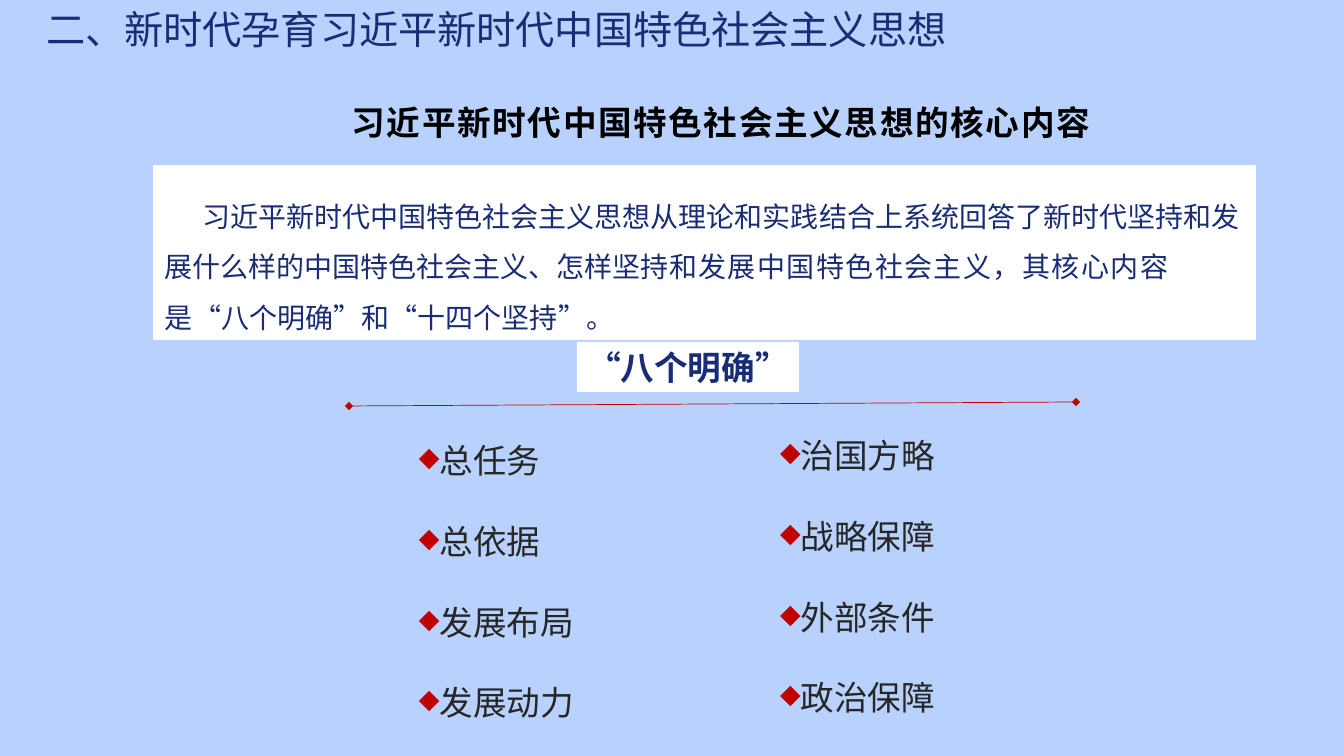
from dataclasses import dataclass, field
from typing import Any

from lxml.etree import SubElement
from pptx import Presentation
from pptx.dml.color import RGBColor
from pptx.enum.lang import MSO_LANGUAGE_ID as Lang
from pptx.enum.shapes import MSO_CONNECTOR as Connector, MSO_SHAPE as Preset
from pptx.enum.text import MSO_ANCHOR as Anchor, MSO_AUTO_SIZE as Fit, PP_ALIGN as Align
from pptx.oxml.ns import qn
from pptx.util import Emu, Pt

SLIDE_W, SLIDE_H = 1344, 756
SCALE = 12192000 / SLIDE_W
FONT = "Noto Sans CJK SC"
NAVY, RED, WHITE, BLACK, GREY = "192C76", "C00000", "FFFFFF", "000000", "262626"
SKY = "B9D2FD"
BULLET_HANG = -31


def px(length: int) -> Emu:
    return Emu(round(length * SCALE))


def paint(target: Any, colour: str) -> None:
    target.solid()
    target.fore_color.rgb = RGBColor.from_string(colour)


def assign(target: Any, values: dict[str, Any]) -> None:
    for name, value in values.items():
        setattr(target, name, value)


@dataclass(frozen=True)
class Piece:
    text: str
    spacing: int = 0


@dataclass(frozen=True)
class Block:
    box: tuple[int, int, int, int]
    paragraphs: list[list[Piece]]
    size: int
    colour: str
    bold: bool = False
    bullet: bool = False
    indent: tuple[int, int] = (0, 0)
    frame: dict[str, Any] = field(default_factory=dict)
    layout: dict[str, Any] = field(default_factory=dict)


def add_bullet(properties: Any) -> None:
    colour = SubElement(properties, qn("a:buClr"))
    SubElement(colour, qn("a:srgbClr"), val=RED)
    SubElement(properties, qn("a:buSzPct"), val="80000")
    SubElement(properties, qn("a:buChar"), char="◆")


def write(shape: Any, block: Block) -> None:
    assign(shape, dict(zip(("left", "top", "width", "height"), map(px, block.box))))
    text_frame = shape.text_frame
    assign(text_frame, {
        "word_wrap": True,
        "auto_size": Fit.SHAPE_TO_FIT_TEXT,
        "vertical_anchor": Anchor.TOP,
        "margin_left": px(10), "margin_right": px(10),
        "margin_top": px(5), "margin_bottom": px(5),
    } | block.frame)
    for index, pieces in enumerate(block.paragraphs):
        paragraph = text_frame.add_paragraph() if index else text_frame.paragraphs[0]
        properties = paragraph._p.get_or_add_pPr()
        for name, length in zip(("marL", "indent"), block.indent):
            properties.set(name, str(px(length)))
        if block.bullet:
            add_bullet(properties)
        assign(paragraph, {"alignment": Align.LEFT} | block.layout)
        for piece in pieces:
            run = paragraph.add_run()
            run.text = piece.text
            assign(run.font, {"name": FONT, "size": Pt(block.size), "bold": block.bold,
                              "language_id": Lang.SIMPLIFIED_CHINESE})
            paint(run.font.fill, block.colour)
            character = run._r.get_or_add_rPr()
            character.set("spc", str(piece.spacing))
            SubElement(character, qn("a:ea"), typeface=FONT)


def add_text(slide: Any, block: Block) -> None:
    write(slide.shapes.add_textbox(*map(px, block.box)), block)


def add_panel(slide: Any, block: Block, outline: str | None = None) -> None:
    panel = slide.shapes.add_shape(Preset.RECTANGLE, *map(px, block.box))
    panel.shadow.inherit = False
    paint(panel.fill, WHITE)
    if outline:
        paint(panel.line.fill, outline)
        panel.line.width = Pt(1)
    else:
        panel.line.fill.background()
    write(panel, block)


def add_divider(slide: Any, start: tuple[int, int], end: tuple[int, int]) -> None:
    divider = slide.shapes.add_connector(Connector.STRAIGHT, *map(px, start + end))
    paint(divider.line.fill, RED)
    divider.line.width = Pt(0.5)
    outline = divider.line._get_or_add_ln()
    for tip in ("a:headEnd", "a:tailEnd"):
        SubElement(outline, qn(tip), type="diamond")
    SubElement(divider._element.spPr, qn("a:effectLst"))


TITLE = Block((18, 0, 1012, 57), [[Piece("二、新时代孕育习近平新时代中国特色社会主义思想")]],
              28, NAVY, indent=(18, 0))
HEADING = Block((204, 97, 1034, 50), [[Piece("习近平新时代中国特色社会主义思想的核心内容", 120)]],
                24, BLACK, bold=True, layout={"alignment": Align.CENTER})
SUMMARY = Block(
    (154, 166, 1101, 173),
    [[Piece("习近平新时代中国特色社会主义思想从理论和实践结合上系统回答了新时代坚持和发展什么样的中国特色社会主义、怎样坚持"),
      Piece("和发展中国特色社会主义，其核心内容是", 100),
      Piece("“八个明确”和“十四个坚持”。")]],
    20, NAVY, indent=(0, 38),
    frame={"auto_size": Fit.NONE, "vertical_anchor": Anchor.BOTTOM},
    layout={"line_spacing": 1.5})
EIGHT_POINTS = Block((577, 342, 222, 50), [[Piece("“八个明确”")]], 24, NAVY, bold=True,
                     frame={"word_wrap": False, "vertical_anchor": Anchor.MIDDLE},
                     layout={"alignment": Align.CENTER})
COLUMNS = [
    ((409, 395, 302, 336), ["总任务", "总依据", "发展布局", "发展动力"]),
    ((770, 390, 311, 336), ["治国方略", "战略保障", "外部条件", "政治保障"]),
]


def main() -> None:
    deck = Presentation()
    assign(deck, {"slide_width": px(SLIDE_W), "slide_height": px(SLIDE_H)})
    slide = deck.slides.add_slide(deck.slide_layouts[5])
    paint(slide.background.fill, SKY)
    write(slide.shapes.title, TITLE)
    add_text(slide, HEADING)
    add_panel(slide, SUMMARY, outline=WHITE)
    add_panel(slide, EIGHT_POINTS)
    for box, points in COLUMNS:
        add_text(slide, Block(box, [[Piece(point)] for point in points], 24, GREY,
                              bullet=True, indent=(0, BULLET_HANG),
                              layout={"line_spacing": 2.0}))
    add_divider(slide, (349, 406), (1076, 402))
    deck.save("out.pptx")


if __name__ == "__main__":
    main()
